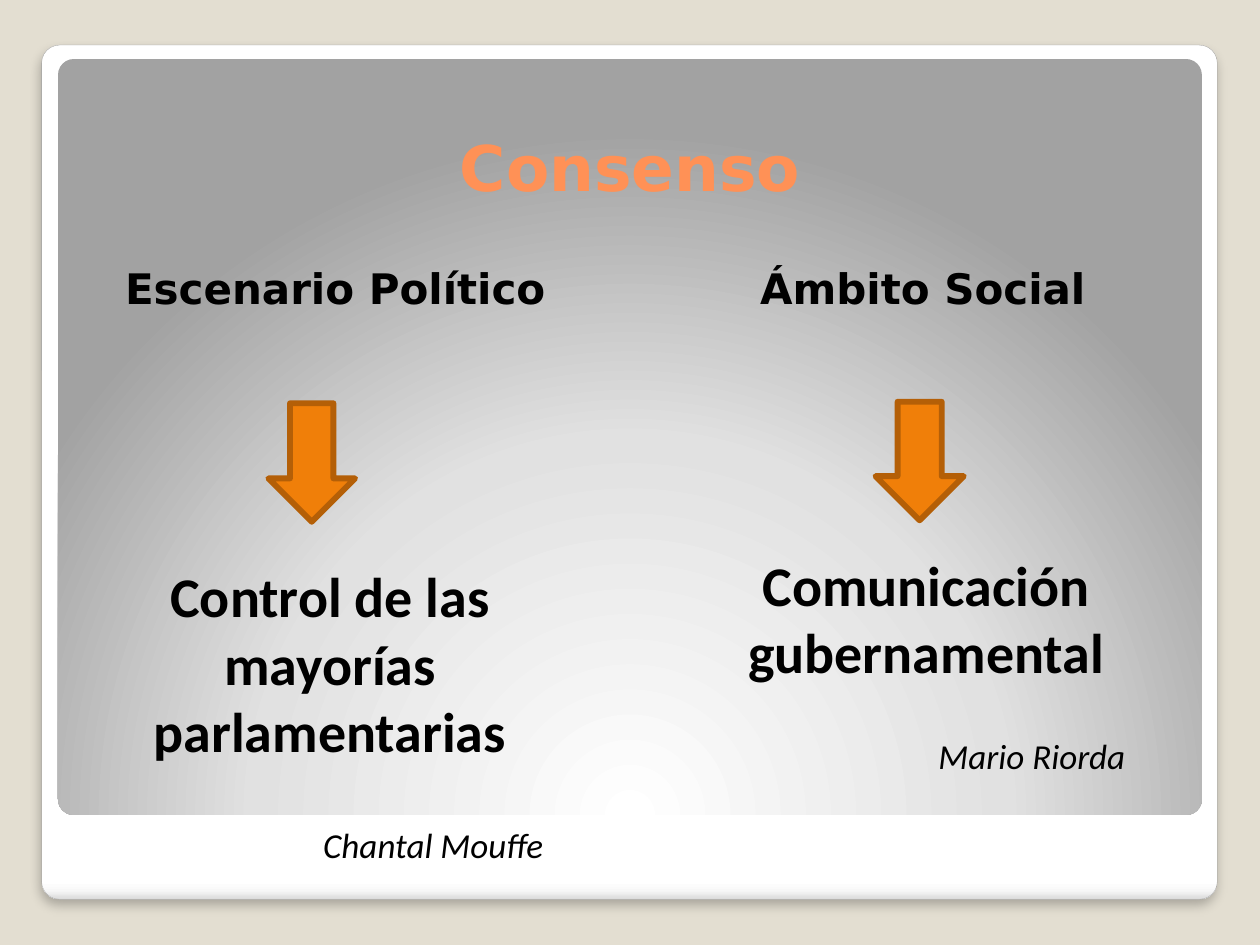
"""Build the "Consenso" slide: two headed columns, each with an arrow, a conclusion and its author."""
from lxml import etree
from pptx import Presentation
from pptx import util as u
from pptx.dml.color import RGBColor
from pptx.enum import shapes, text
from pptx.oxml import ns

COLOURS = {
    "backdrop": "E3DED1", "title": "FF9156", "ink": "000000",
    "arrow": "F07F09", "arrow_edge": "B45F07", "card_edge": "A4A4A4",
}
CARD = (0.84, 0.91, 23.7, 17.22)
CARD_STOPS = [(0, "FFFFFF"), (98, "FFFFFF"), (99, "F7F7F7"), (100, "DADADA")]
CARD_SHADE = '<a:lin ang="5400000" scaled="0"/>'
PANEL = (1.17, 1.19, 23.06, 15.24)
PANEL_STOPS = [(0, "FFFFFF"), (55, "E1E1E1"), (100, "A2A2A2")]
PANEL_SHADE = '<a:path path="circle"><a:fillToRect l="50000" t="175000" r="50000" b="-75000"/></a:path>'
CARD_SHADOW = (
    '<a:outerShdw blurRad="76200" dist="50800" dir="5400000" algn="t" rotWithShape="0">'
    '<a:srgbClr val="000000"><a:alpha val="25000"/></a:srgbClr></a:outerShdw>'
)

HEAD_FONT, BODY_FONT = "DejaVu Sans", "Calibri"
TITLE = ("Consenso", (2.54, 2.03, 20.32, 2.54))
COLUMNS = [
    {"heading": "Escenario Político", "heading_at": (1.5, 4.93, 10.39, 1.6), "heading_inset": 0.38,
     "arrow_at": (5.41, 8.13, 1.75, 2.39),
     "conclusion": "Control de las mayorías parlamentarias", "author": "Chantal Mouffe",
     "conclusion_at": (2.11, 11.08, 9.09, 6.2), "conclusion_inset": 0.25, "author_gap": 34},
    {"heading": "Ámbito Social", "heading_at": (13.23, 4.93, 10.59, 1.6), "heading_inset": 0.41,
     "arrow_at": (17.65, 8.1, 1.78, 2.39),
     "conclusion": "Comunicación gubernamental", "author": "Mario Riorda",
     "conclusion_at": (14.15, 10.85, 8.79, 4.8), "conclusion_inset": 0.51, "author_gap": 28},
]


def colour(name):
    return RGBColor.from_string(COLOURS[name])


def a_xml(markup):
    return etree.fromstring(f'<a:root xmlns:a="{ns.nsuri("a")}">{markup}</a:root>')[0]


def add_preset(slide, preset, place):
    preset_shape = slide.shapes.add_shape(preset, *map(u.Cm, place))
    preset_shape.shadow.inherit = False
    return preset_shape


def add_rounded(slide, place, stops, shade):
    rounded = add_preset(slide, shapes.MSO_SHAPE.ROUNDED_RECTANGLE, place)
    rounded.adjustments[0] = 0.021
    rounded.line.fill.background()
    rounded.fill.solid()
    steps = "".join(
        f'<a:gs pos="{pos * 1000}"><a:srgbClr val="{value}"/></a:gs>' for pos, value in stops)
    properties = rounded.element.spPr
    gradient = a_xml(f'<a:gradFill rotWithShape="1"><a:gsLst>{steps}</a:gsLst>{shade}</a:gradFill>')
    properties.replace(properties.find(ns.qn("a:solidFill")), gradient)
    return rounded


def add_text(slide, place, paragraphs, left=0.25, anchor=text.MSO_ANCHOR.TOP):
    box = slide.shapes.add_textbox(*map(u.Cm, place))
    frame = box.text_frame
    frame.word_wrap = True
    frame.vertical_anchor = anchor
    frame.margin_left, frame.margin_right = u.Cm(left), u.Cm(0.25)
    frame.margin_top = u.Cm(0.25)
    for index, (words, align, before, style) in enumerate(paragraphs):
        paragraph = frame.add_paragraph() if index else frame.paragraphs[0]
        paragraph.alignment = align
        paragraph.space_before = u.Pt(before)
        run = paragraph.add_run()
        run.text = words
        font_name, size, bold, italic, ink = style
        run.font.name, run.font.size = font_name, u.Pt(size)
        run.font.bold, run.font.italic = bold, italic
        run.font.color.rgb = colour(ink)
    return box


def main():
    deck = Presentation()
    deck.slide_width, deck.slide_height = u.Cm(25.4), u.Cm(19.05)
    slide = deck.slides.add_slide(deck.slide_layouts[6])
    slide.background.fill.solid()
    slide.background.fill.fore_color.rgb = colour("backdrop")

    card = add_rounded(slide, CARD, CARD_STOPS, CARD_SHADE)
    card.line.color.rgb = colour("card_edge")
    card.line.width = u.Pt(0.16)
    card.element.spPr.find(ns.qn("a:effectLst")).append(a_xml(CARD_SHADOW))
    add_rounded(slide, PANEL, PANEL_STOPS, PANEL_SHADE)

    centre, right = text.PP_ALIGN.CENTER, text.PP_ALIGN.RIGHT
    middle = text.MSO_ANCHOR.MIDDLE
    title, title_at = TITLE
    add_text(slide, title_at, [(title, centre, 0, (HEAD_FONT, 36, True, False, "title"))], anchor=middle)

    for column in COLUMNS:
        add_text(slide, column["heading_at"],
                 [(column["heading"], centre, 0, (HEAD_FONT, 24, True, False, "ink"))],
                 column["heading_inset"], middle)
        arrow = add_preset(slide, shapes.MSO_SHAPE.DOWN_ARROW, column["arrow_at"])
        arrow.fill.solid()
        arrow.fill.fore_color.rgb = colour("arrow")
        arrow.line.color.rgb = colour("arrow_edge")
        arrow.line.width = u.Pt(3.35)
        add_text(slide, column["conclusion_at"], [
            (column["conclusion"], centre, 0, (BODY_FONT, 32, True, False, "ink")),
            (column["author"], right, column["author_gap"], (BODY_FONT, 20, False, True, "ink")),
        ], column["conclusion_inset"])

    deck.save("out.pptx")


if __name__ == "__main__":
    main()
